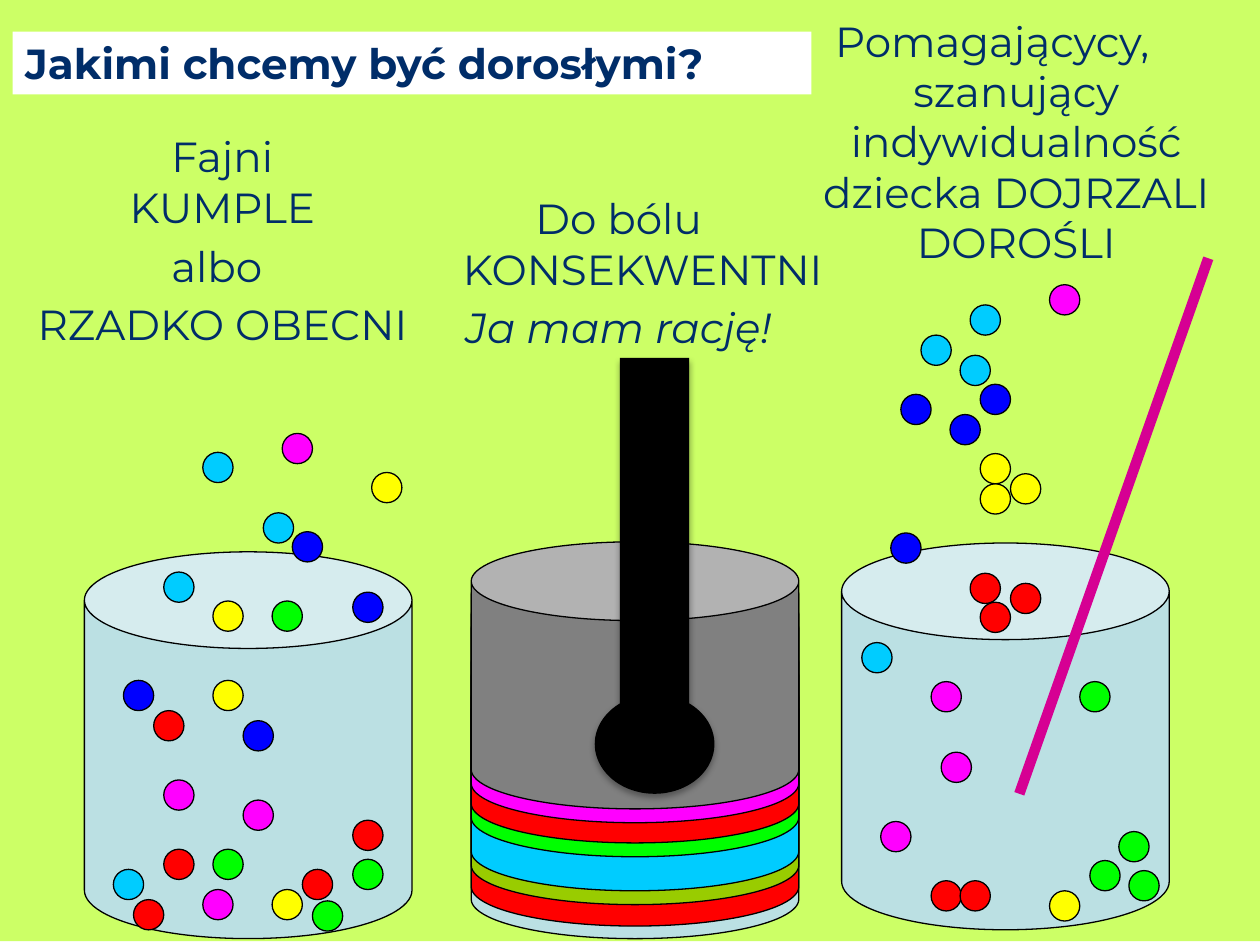
from lxml.etree import SubElement
from pptx import Presentation
from pptx.dml.color import RGBColor
from pptx.enum.shapes import MSO_CONNECTOR, MSO_SHAPE
from pptx.enum.text import MSO_ANCHOR, PP_ALIGN
from pptx.oxml.ns import qn
from pptx.util import Inches, Pt

LIME = RGBColor(0xCC, 0xFF, 0x66)
WHITE = RGBColor(0xFF, 0xFF, 0xFF)
BLACK = RGBColor(0x00, 0x00, 0x00)
NAVY = RGBColor(0x00, 0x2D, 0x69)
GLASS = RGBColor(0xBB, 0xE0, 0xE3)
GRAY = RGBColor(0x80, 0x80, 0x80)
OLIVE = RGBColor(0x99, 0xCC, 0x00)
RED = RGBColor(0xFF, 0x00, 0x00)
YELLOW = RGBColor(0xFF, 0xFF, 0x00)
MAGENTA = RGBColor(0xFF, 0x00, 0xFF)
BLUE = RGBColor(0x00, 0x00, 0xFF)
CYAN = RGBColor(0x00, 0xCC, 0xFF)
GREEN = RGBColor(0x00, 0xFF, 0x00)
ROD_PINK = RGBColor(0xD6, 0x00, 0x93)

BALL_SIZE = 0.24
HANGING = 0.38

# Tops of the stacked cans, from the bottom layer up
LAYERS = [(5.33, GLASS), (5.23, RED), (5.06, OLIVE), (4.95, CYAN),
          (4.68, GREEN), (4.57, RED), (4.41, MAGENTA), (4.3, GRAY)]

LEFT_BALLS = [
    (RED, [(1.22, 5.64), (1.06, 7.14), (1.3, 6.74), (2.8, 6.51), (2.4, 6.9)]),
    (YELLOW, [(2.16, 7.06), (1.69, 4.77), (2.95, 3.75), (1.69, 5.4)]),
    (MAGENTA, [(1.93, 6.35), (1.3, 6.19), (1.61, 7.06), (2.24, 3.44)]),
    (BLUE, [(2.32, 4.22), (0.98, 5.4), (2.8, 4.7), (1.93, 5.72)]),
    (CYAN, [(1.61, 3.59), (1.3, 4.54), (2.09, 4.07), (0.9, 6.9)]),
    (GREEN, [(1.69, 6.74), (2.16, 4.77), (2.48, 7.15), (2.8, 6.82)]),
]
RIGHT_BALLS = [
    (RED, [(7.7, 4.55), (7.39, 6.99), (7.78, 4.78), (8.02, 4.63), (7.62, 6.99)]),
    (YELLOW, [(8.33, 7.07), (7.78, 3.6), (8.02, 3.76), (7.78, 3.84)]),
    (MAGENTA, [(7.39, 5.41), (7.47, 5.97), (6.99, 6.52), (8.33, 2.26)]),
    (BLUE, [(7.78, 3.05), (7.07, 4.23), (7.54, 3.29), (7.15, 3.13)]),
    (CYAN, [(7.7, 2.42), (7.62, 2.82), (7.31, 2.66), (6.84, 5.1)]),
    (GREEN, [(8.96, 6.91), (8.57, 5.41), (8.65, 6.83), (8.88, 6.6)]),
]


class SlideBuilder:
    font_name = "Montserrat"
    font_size = Pt(24)
    paragraph_gap = Pt(4.8)
    outline_width = Pt(0.75)

    def __init__(self, slide):
        self.slide = slide

    def shape(self, kind, left, top, width, height, color, outlined=False):
        shape = self.slide.shapes.add_shape(
            kind, Inches(left), Inches(top), Inches(width), Inches(height))
        shape.shadow.inherit = False
        shape.fill.solid()
        shape.fill.fore_color.rgb = color
        if outlined:
            shape.line.color.rgb = BLACK
            shape.line.width = self.outline_width
        else:
            shape.line.fill.background()
        return shape

    def can(self, left, top, height, color):
        can = self.shape(MSO_SHAPE.CAN, left, top, 2.6, height, color, outlined=True)
        can.adjustments[0] = 0.295

    def balls(self, groups):
        for color, places in groups:
            for left, top in places:
                self.shape(MSO_SHAPE.OVAL, left, top, BALL_SIZE, BALL_SIZE,
                           color, outlined=True)

    def masher_part(self, kind, left, top, width, height):
        """Add a black shape with a soft shadow below it."""
        part = self.shape(kind, left, top, width, height, BLACK)
        effects = part.element.spPr.find(qn("a:effectLst"))
        shadow = SubElement(effects, qn("a:outerShdw"), blurRad=str(Pt(3.5)),
                            dist=str(Pt(2.2)), dir="5400000", rotWithShape="0")
        color = SubElement(shadow, qn("a:srgbClr"), val=str(BLACK))
        SubElement(color, qn("a:alpha"), val="32000")

    def rod(self, start, end):
        rod = self.slide.shapes.add_connector(
            MSO_CONNECTOR.STRAIGHT, *map(Inches, start + end))
        rod.line.color.rgb = ROD_PINK
        rod.line.width = Pt(6)
        SubElement(rod.element.spPr, qn("a:effectLst"))

    def run(self, paragraph, text, bold=False, italic=False):
        run = paragraph.add_run()
        run.text = text
        run.font.name = self.font_name
        run.font.size = self.font_size
        run.font.color.rgb = NAVY
        run.font.bold = bold
        run.font.italic = italic

    def label(self, left, top, width, height, paragraphs, hanging=0, italic_last=False):
        """Add centred paragraphs, each given as a list of lines."""
        box = self.slide.shapes.add_textbox(
            Inches(left), Inches(top), Inches(width), Inches(height))
        frame = box.text_frame
        frame.word_wrap = True
        for index, lines in enumerate(paragraphs):
            paragraph = frame.add_paragraph() if index else frame.paragraphs[0]
            paragraph.alignment = PP_ALIGN.CENTER
            if index:
                paragraph.space_before = self.paragraph_gap
            if hanging:
                properties = paragraph._p.get_or_add_pPr()
                properties.set("marL", str(Inches(hanging)))
                properties.set("indent", str(-Inches(hanging)))
            italic = italic_last and index == len(paragraphs) - 1
            for number, line in enumerate(lines):
                if number:
                    paragraph.add_line_break()
                self.run(paragraph, line, italic=italic)

    def title(self, left, top, width, height, text):
        title = self.slide.shapes.title
        title.left, title.top = Inches(left), Inches(top)
        title.width, title.height = Inches(width), Inches(height)
        title.fill.solid()
        title.fill.fore_color.rgb = WHITE
        title.text_frame.vertical_anchor = MSO_ANCHOR.MIDDLE
        paragraph = title.text_frame.paragraphs[0]
        paragraph.alignment = PP_ALIGN.LEFT
        self.run(paragraph, text, bold=True)
        # The title stands in front of the green panel
        title.element.getparent().append(title.element)


def main():
    presentation = Presentation()
    presentation.slide_width = Inches(10)
    presentation.slide_height = Inches(7.5)
    builder = SlideBuilder(presentation.slides.add_slide(presentation.slide_layouts[5]))

    builder.shape(MSO_SHAPE.RECTANGLE, 0, -0.03, 10, 7.5, LIME)
    for top, color in LAYERS:
        builder.can(3.74, top, 2.12, color)
    builder.can(0.67, 4.38, 3.07, GLASS)
    builder.balls(LEFT_BALLS)
    builder.can(6.68, 4.31, 3.07, GLASS)
    builder.balls(RIGHT_BALLS)
    builder.rod((9.59, 2.05), (8.09, 6.3))

    builder.label(-0.04, 0.99, 3.61, 1.88,
                  [["Fajni", "KUMPLE"], ["albo "], ["RZADKO OBECNI"]])
    builder.label(5.84, 0.07, 4.07, 2.12,
                  [["Pomagającycy,",
                    "szanujący indywidualność dziecka DOJRZALI DOROŚLI"]],
                  hanging=HANGING)
    builder.label(2.98, 1.48, 3.86, 1.39,
                  [["Do bólu KONSEKWENTNI"], ["Ja mam rację!"]],
                  hanging=HANGING, italic_last=True)
    builder.masher_part(MSO_SHAPE.OVAL, 4.72, 5.51, 0.95, 0.79)
    builder.masher_part(MSO_SHAPE.RECTANGLE, 4.92, 2.84, 0.55, 2.95)
    builder.title(0.1, 0.25, 6.34, 0.5, "Jakimi chcemy być dorosłymi?")

    presentation.save("out.pptx")


if __name__ == "__main__":
    main()
